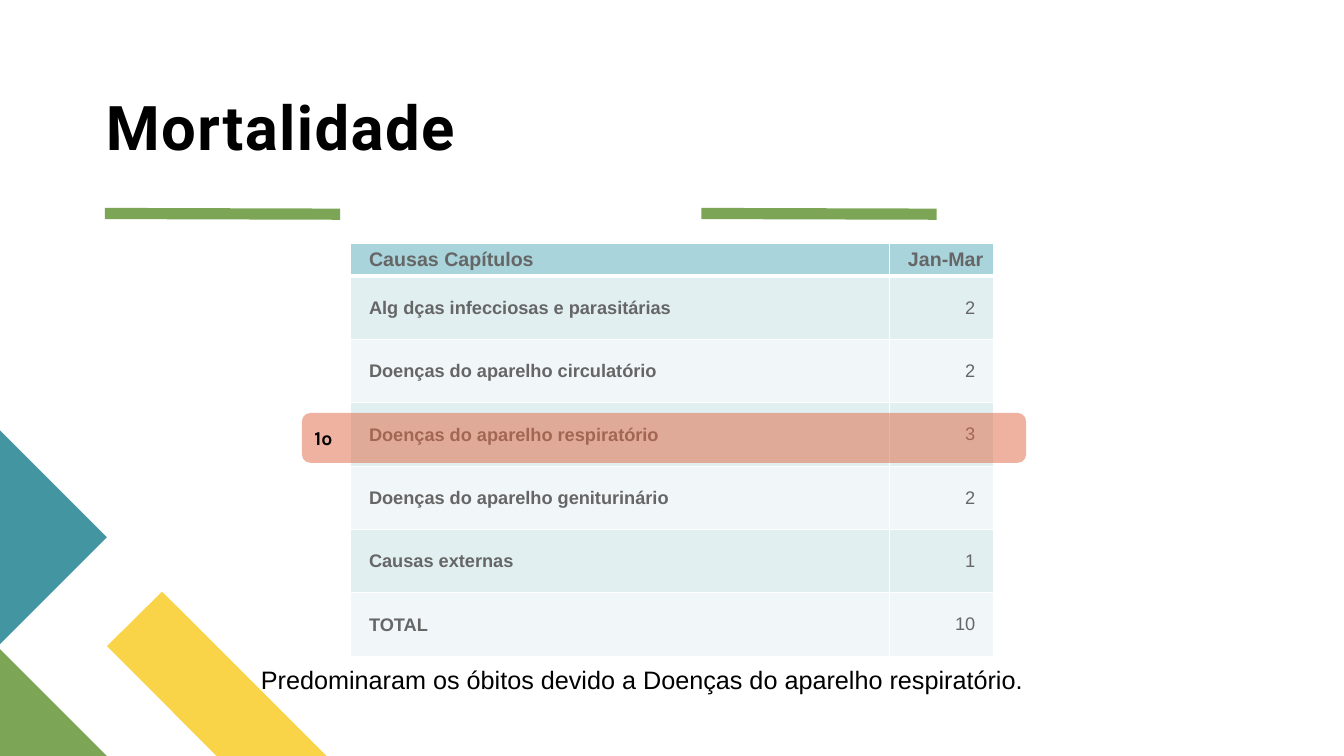
"""Build the mortality slide: causes of death table with the leading cause marked."""
from dataclasses import dataclass

import lxml.etree
import pptx
import pptx.dml.color
import pptx.enum.shapes
import pptx.enum.text
import pptx.oxml.ns
import pptx.util

Pt = pptx.util.Pt
Align = pptx.enum.text.PP_ALIGN
Anchor = pptx.enum.text.MSO_ANCHOR
qn = pptx.oxml.ns.qn


@dataclass(frozen=True)
class Theme:
    teal: str = "4495A2"
    green: str = "7CA655"
    yellow: str = "F9D448"
    coral: str = "E06742"
    header: str = "A9D4DB"
    odd_row: str = "E2EFF1"
    even_row: str = "F1F7F8"
    border: str = "FFFFFF"
    ink: str = "000000"
    table_ink: str = "666666"
    title_font: str = "Roboto"
    rank_font: str = "Karla"
    body_font: str = "Arial"
    title_size: float = 44
    note_size: float = 18
    header_size: float = 14
    rank_size: float = 14
    cell_size: float = 13


@dataclass(frozen=True)
class Corner:
    color: str
    points: tuple[tuple[float, float], ...]


@dataclass(frozen=True)
class Cause:
    name: str
    deaths: str


@dataclass(frozen=True)
class Style:
    font: str
    size: float
    color: str
    bold: bool = False


THEME = Theme()
CORNERS = (
    Corner(THEME.yellow, ((233.3, 540), (154.8, 540), (76.4, 461.6), (115.8, 422.6))),
    Corner(THEME.green, ((76.4, 540), (0, 540), (0, 463.6))),
    Corner(THEME.teal, ((0, 307.4), (76.4, 383.8), (0, 460.1))),
)
RULE_LEFTS = (75, 501)
RULE_LENGTH = 168
HEADINGS = Cause("Causas Capítulos", "Jan-Mar")
CAUSES = (
    Cause("Alg dças infecciosas e parasitárias", "2"),
    Cause("Doenças do aparelho circulatório", "2"),
    Cause("Doenças do aparelho respiratório", "3"),
    Cause("Doenças do aparelho geniturinário", "2"),
    Cause("Causas externas", "1"),
    Cause("TOTAL", "10"),
)
COLUMN_WIDTHS = (385, 74.8)
HEADER_HEIGHT = 23.7
ROW_HEIGHT = 44.6


def rgb(color: str) -> pptx.dml.color.RGBColor:
    """Turn a hex string into a colour."""
    return pptx.dml.color.RGBColor.from_string(color)


def write(paragraph, text: str, style: Style) -> None:
    """Fill a paragraph with text in one style."""
    paragraph.text = text
    font = paragraph.font
    font.name, font.size, font.bold = style.font, Pt(style.size), style.bold
    font.color.rgb = rgb(style.color)


def paint(shape, color: str) -> None:
    """Give a shape a flat fill without line or shadow."""
    shape.shadow.inherit = False
    shape.fill.solid()
    shape.fill.fore_color.rgb = rgb(color)
    shape.line.fill.background()


def draw_corner(slide, corner: Corner) -> None:
    """Draw one polygon of the corner ornament."""
    start, *rest = [(Pt(x), Pt(y)) for x, y in corner.points]
    builder = slide.shapes.build_freeform(*start)
    builder.add_line_segments(rest, close=True)
    paint(builder.convert_to_shape(), corner.color)


def draw_rule(slide, left: float) -> None:
    """Draw one thick rule below the title."""
    rule = slide.shapes.add_connector(
        pptx.enum.shapes.MSO_CONNECTOR.STRAIGHT,
        Pt(left), Pt(152.5), Pt(left + RULE_LENGTH), Pt(153))
    rule.line.color.rgb = rgb(THEME.green)
    rule.line.width = Pt(8)
    lxml.etree.SubElement(rule._element.spPr, qn("a:effectLst"))


def draw_text(slide, box: tuple[float, ...], text: str, style: Style):
    """Add a wrapping text box and return its frame."""
    frame = slide.shapes.add_textbox(*map(Pt, box)).text_frame
    frame.word_wrap = True
    write(frame.paragraphs[0], text, style)
    return frame


def draw_title(slide) -> None:
    """Add the letter-spaced title."""
    frame = draw_text(slide, (75.6, 69.1, 684.7, 48.2), "Mortalidade",
                      Style(THEME.title_font, THEME.title_size, THEME.ink, True))
    frame.vertical_anchor = Anchor.BOTTOM
    frame.margin_left = frame.margin_top = frame.margin_right = frame.margin_bottom = 0
    title = frame.paragraphs[0]
    title.line_spacing = 0.9
    title.runs[0].font._element.set("spc", "100")


def set_borders(cell, top: float, bottom: float) -> None:
    """Put border lines of the given widths around a cell."""
    properties = cell._tc.get_or_add_tcPr()
    sides = (("a:lnL", 1), ("a:lnR", 1), ("a:lnT", top), ("a:lnB", bottom))
    for position, (side, width) in enumerate(sides):
        line = lxml.etree.Element(qn(side), w=str(Pt(width)))
        fill = lxml.etree.SubElement(line, qn("a:solidFill"))
        lxml.etree.SubElement(fill, qn("a:srgbClr"), val=THEME.border)
        properties.insert(position, line)


def fill_cell(cell, text: str, row: int, is_count: bool) -> None:
    """Write and format one table cell."""
    is_header = row == 0
    size = THEME.header_size if is_header else THEME.cell_size
    paragraph = cell.text_frame.paragraphs[0]
    write(paragraph, text, Style(THEME.body_font, size, THEME.table_ink, not is_count))
    cell.vertical_anchor = Anchor.MIDDLE
    if is_count:
        paragraph.alignment = Align.RIGHT
        margins = (0.7, 14.8, 13.4, 14.8)
    else:
        margins = (13.4, 0.7, 0.7, 0)
    cell.margin_left, cell.margin_top, cell.margin_right, cell.margin_bottom = map(Pt, margins)
    cell.fill.solid()
    band = THEME.odd_row if row % 2 else THEME.even_row
    cell.fill.fore_color.rgb = rgb(THEME.header if is_header else band)
    set_borders(cell, 3 if row == 1 else 1, 3 if is_header else 1)


def draw_causes(slide) -> None:
    """Add the table of causes."""
    rows = (HEADINGS, *CAUSES)
    height = HEADER_HEIGHT + ROW_HEIGHT * len(CAUSES)
    table = slide.shapes.add_table(
        len(rows), 2, Pt(250.2), Pt(173.5), Pt(sum(COLUMN_WIDTHS)), Pt(height)).table
    for column, width in zip(table.columns, COLUMN_WIDTHS):
        column.width = Pt(width)
    for row, cause in enumerate(rows):
        table.rows[row].height = Pt(ROW_HEIGHT if row else HEADER_HEIGHT)
        fill_cell(table.cell(row, 0), cause.name, row, False)
        fill_cell(table.cell(row, 1), cause.deaths, row, row > 0)


def draw_highlight(slide) -> None:
    """Lay the translucent first-place band over the leading cause."""
    band = slide.shapes.add_shape(
        pptx.enum.shapes.MSO_SHAPE.ROUNDED_RECTANGLE, Pt(215.7), Pt(295), Pt(517.3), Pt(35.6))
    paint(band, THEME.coral)
    tint = band._element.spPr.find(qn("a:solidFill")).find(qn("a:srgbClr"))
    lxml.etree.SubElement(tint, qn("a:alpha"), val="50000")
    band.text_frame.vertical_anchor = Anchor.MIDDLE
    rank = band.text_frame.paragraphs[0]
    write(rank, "1º", Style(THEME.rank_font, THEME.rank_size, THEME.ink, True))
    rank.alignment = Align.LEFT


def main() -> None:
    """Assemble and save the slide."""
    deck = pptx.Presentation()
    deck.slide_width, deck.slide_height = Pt(960), Pt(540)
    slide = deck.slides.add_slide(deck.slide_layouts[6])
    for corner in CORNERS:
        draw_corner(slide, corner)
    for left in RULE_LEFTS:
        draw_rule(slide, left)
    draw_title(slide)
    draw_causes(slide)
    draw_highlight(slide)
    draw_text(slide, (179.3, 471, 589.7, 29), "Predominaram os óbitos devido a Doenças do aparelho respiratório.",
              Style(THEME.body_font, THEME.note_size, THEME.ink))
    deck.save("out.pptx")


if __name__ == "__main__":
    main()
